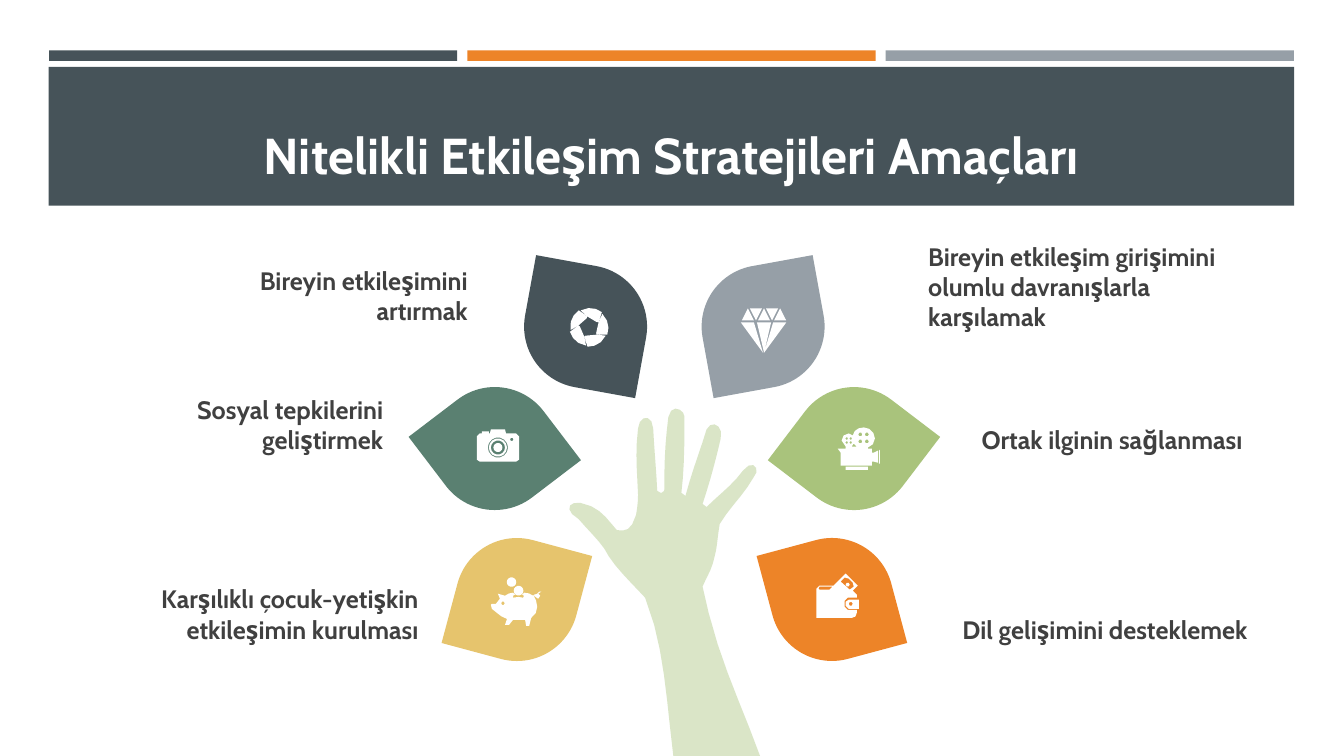
from math import cos, dist, pi, radians, sin

from lxml.etree import SubElement
from pptx import Presentation
from pptx.dml.color import RGBColor
from pptx.enum.shapes import MSO_SHAPE as Preset
from pptx.enum.text import MSO_ANCHOR as Anchor, PP_ALIGN as Align
from pptx.oxml.ns import qn
from pptx.util import Pt

FONT = "Cabin"
COLORS = {
    "slate": "465359", "orange": "ED8428", "grey": "969FA7", "green": "A9C37C",
    "teal": "5A8071", "sand": "E6C46D", "hand": "CBDBB0", "white": "FFFFFF",
    "text": "404040",
}
AXIS = 481.7  # the leaves mirror each other about this x
LEAF_SIZE = 87.84
GRID = 0.72  # outlines are given in steps of 0.72 pt

# Centre x, centre y, rotation, colour of right leaf, colour of left leaf
LEAF_PAIRS = [
    (545.1, 233.3, -10.3, "grey", "slate"),
    (610, 320.4, 37.3, "green", "teal"),
    (594.2, 428.2, 75, "orange", "sand"),
]

# Text, left, top, width, height, alignment
LABELS = [
    ("Ortak ilginin sağlanması", 694.1, 299.5, 219.6, 51, Align.LEFT),
    ("Dil gelişimini desteklemek", 680.4, 434.9, 219.6, 51, Align.LEFT),
    ("Bireyin etkileşim girişimini olumlu davranışlarla karşılamak",
     655.9, 168.5, 219.6, 94, Align.LEFT),
    ("Karşılıklı çocuk-yetişkin etkileşimin kurulması", 85, 413.3, 221, 73, Align.RIGHT),
    ("Sosyal tepkilerini geliştirmek", 59.8, 277.9, 221, 51, Align.RIGHT),
    ("Bireyin etkileşimini artırmak", 120.2, 185.8, 221, 51, Align.RIGHT),
]

HAND = """M 668 750 L 754 750 C 736 700 717 663 703 608 L 697 582
C 702 570 706 566 709 552 712 540 711 538 714 520 724 503 738 491 748 473
755 466 747 454 737 467 727 481 713 491 701 503 L 697 500
C 704 479 710 457 715 435 718 422 706 416 701 426 694 449 687 466 680 492
L 676 489 C 679 465 679 438 679 413 679 407 666 399 663 414
660 439 659 455 659 487 659 489 653 491 652 487 651 465 649 445 648 425
647 410 634 412 633 425 630 449 632 467 633 491 633 499 632 505 631 511
626 527 621 527 612 526 602 515 596 503 576 499 563 497 560 507 574 515
584 527 598 539 604 552 613 566 631 583 640 593 L 649 620
C 660 661 662 702 668 750"""

DIAMOND = """M 780 320 L 758 350 767 320 M 735 320 L 748 320 757 350
M 751 320 L 765 320 758 350 M 760 306 L 772 306 766 318
M 774 306 L 780 318 768 318 M 758 306 L 764 318 752 318
M 744 306 L 756 306 750 318 M 742 306 L 748 318 736 318"""

WALLET = """M 842 595 L 852 595 852 604 842 604 839 601 839 597
M 813 582 L 812 584 813 585 823 585 826 582
M 838 573 L 834 577 843 585 847 582 846 578 842 574
M 839 569 L 851 581 846 586 850 590 850 593 841 593 838 596 838 602
841 605 850 605 850 608 C 850 611 848 613 845 613
L 810 613 810 584 813 581 827 581"""

PIGGY_BANK = """M 537 587 L 534 589 536 591 534 594 531 592 531 590 530 592
C 531 594 533 597 533 602 533 607 531 610 527 613
L 525 621 522 621 521 615 509 615 505 620 501 620 503 614
C 498 612 496 611 493 608 L 488 604 487 600 488 599 492 599
C 494 597 495 596 496 594 L 494 589 501 591
C 504 589 506 588 509 588 L 511 590 509 591 509 593
C 513 592 516 592 519 593 L 520 591 518 590 520 588
C 523 588 527 589 529 591 L 530 590 533 589 535 587"""

PROJECTOR = """M 839 463 L 861 463 861 466 839 466 M 873 446 L 873 460 872 460 872 447
M 847 440 L 845 443 850 443
M 857 424 C 863 424 868 429 868 435 868 439 865 443 861 444
L 861 445 865 445 865 449 867 449 871 447 871 459 867 458 865 458 865 462
834 462 834 449 831 445 839 445 839 443 C 837 442 835 439 835 437
835 433 838 430 842 430 L 846 432 C 847 427 851 424 857 424"""

CAMERA = """M 487 426 L 501 426 502 430 512 430 515 433 515 456 512 458
476 458 473 456 473 433 476 430 478 430 478 428 485 428 485 430 486 430"""

SHUTTER_BLADE = """M 592 332 L 601 333 C 597 341 590 344 583 344
L 581 338 580 334 581 333"""


def bezier(start, control1, control2, end):
    """Return points along a cubic curve, without its start; long curves get more."""
    corners = (start, control1, control2, end)
    steps = min(5, 1 + int(sum(map(dist, corners, corners[1:])) / 8))
    points = []
    for step in range(1, steps + 1):
        t = step / steps
        weights = ((1 - t) ** 3, 3 * t * (1 - t) ** 2, 3 * t * t * (1 - t), t ** 3)
        points.append(tuple(sum(w * corner[axis] for w, corner in zip(weights, corners))
                            for axis in (0, 1)))
    return points


def contours(outline):
    """Turn M, L and C commands into lists of points, one for each closed contour."""
    result, command, pending = [], "M", []
    tokens = iter(outline.split())
    for token in tokens:
        if token.isalpha():
            command = token
            continue
        pending.append((float(token), float(next(tokens))))
        if command == "M":
            result.append(pending)
        elif command == "L":
            result[-1].extend(pending)
        elif len(pending) == 3:
            result[-1].extend(bezier(result[-1][-1], *pending))
        else:
            continue
        pending = []
    return result


def circle(x, y, radius):
    sides = 6 if radius < 3 else 14
    angles = [2 * pi * i / sides for i in range(sides)]
    return [(x + radius * cos(angle), y + radius * sin(angle)) for angle in angles]


def turned(points, center, degrees):
    x0, y0 = center
    c, s = cos(radians(degrees)), sin(radians(degrees))
    return [(x0 + (x - x0) * c - (y - y0) * s, y0 + (x - x0) * s + (y - y0) * c)
            for x, y in points]


def paint(shape, color):
    shape.shadow.inherit = False
    shape.fill.solid()
    shape.fill.fore_color.rgb = RGBColor.from_string(COLORS[color])
    shape.line.fill.background()
    return shape


def add_preset(slide, preset, box, color):
    return paint(slide.shapes.add_shape(preset, *map(Pt, box)), color)


def add_outline(slide, outline, color):
    loops = [[(Pt(x * GRID), Pt(y * GRID)) for x, y in loop] for loop in outline]
    builder = slide.shapes.build_freeform(*loops[0][0])
    builder.add_line_segments(loops[0][1:])
    for loop in loops[1:]:
        builder.move_to(*loop[0])
        builder.add_line_segments(loop[1:])
    return paint(builder.convert_to_shape(), color)


def add_leaf(slide, center_x, center_y, rotation, color, rounding):
    half = LEAF_SIZE / 2
    box = (center_x - half, center_y - half, LEAF_SIZE, LEAF_SIZE)
    leaf = add_preset(slide, Preset.ROUND_2_DIAG_RECTANGLE, box, color)
    leaf.rotation = rotation
    leaf.adjustments[0], leaf.adjustments[1] = rounding


def add_text(slide, text, box, size, color, align, anchor=Anchor.TOP):
    frame = slide.shapes.add_textbox(*map(Pt, box)).text_frame
    frame.word_wrap = True
    frame.vertical_anchor = anchor
    paragraph = frame.paragraphs[0]
    paragraph.alignment = align
    run = paragraph.add_run()
    run.text = text
    for name, value in {"name": FONT, "size": Pt(size), "bold": True}.items():
        setattr(run.font, name, value)
    run.font.color.rgb = RGBColor.from_string(COLORS[color])


def add_header(slide):
    for column, color in enumerate(("slate", "orange", "grey")):
        add_preset(slide, Preset.RECTANGLE, (35 + 298.8 * column, 36, 291.6, 7.5), color)
    add_preset(slide, Preset.RECTANGLE, (34.7, 47.8, 889.8, 99.2), "slate")
    add_text(slide, "Nitelikli Etkileşim Stratejileri Amaçları", (45.4, 57.6, 868.3, 77.8),
             36, "white", Align.CENTER, Anchor.BOTTOM)


def add_hand(slide):
    hand = add_outline(slide, contours(HAND), "hand")
    color = hand.fill._xPr.find(qn("a:solidFill"))[0]
    SubElement(color, qn("a:alpha")).set("val", "70000")


def add_icons(slide):
    reel_holes = [circle(x, y, 2) for x in (853.5, 860) for y in (431, 438)]
    reel_holes += [circle(x, y, 1.3) for x in (840, 844) for y in (435, 439)]
    lens = [circle(494, 444, radius) for radius in (10, 9, 7, 4.5)]
    coins = [circle(514.5, 586, 4.8), circle(507.5, 577.5, 4.7)]
    blade = contours(SHUTTER_BLADE)[0]
    icons = [
        contours(DIAMOND),
        contours(WALLET) + [circle(844, 599, 2), circle(841, 580, 2)],
        contours(PIGGY_BANK) + [circle(499, 598.5, 1.8)] + coins,
        contours(PROJECTOR) + reel_holes,
        contours(CAMERA) + lens + [circle(507.7, 436, 1.7)],
        [turned(blade, (584.5, 324.5), 72 * i) for i in range(5)],
    ]
    for icon in icons:
        add_outline(slide, icon, "white")


def main():
    presentation = Presentation()
    presentation.slide_width, presentation.slide_height = Pt(960), Pt(540)
    slide = presentation.slides.add_slide(presentation.slide_layouts[6])
    add_header(slide)
    add_hand(slide)
    for x, y, rotation, right_color, left_color in LEAF_PAIRS:
        add_leaf(slide, x, y, rotation, right_color, (0.5, 0))
        add_leaf(slide, 2 * AXIS - x, y, -rotation, left_color, (0, 0.5))
    add_icons(slide)
    for text, *box, align in LABELS:
        add_text(slide, text, box, 18, "text", align)
    presentation.save("out.pptx")


if __name__ == "__main__":
    main()
